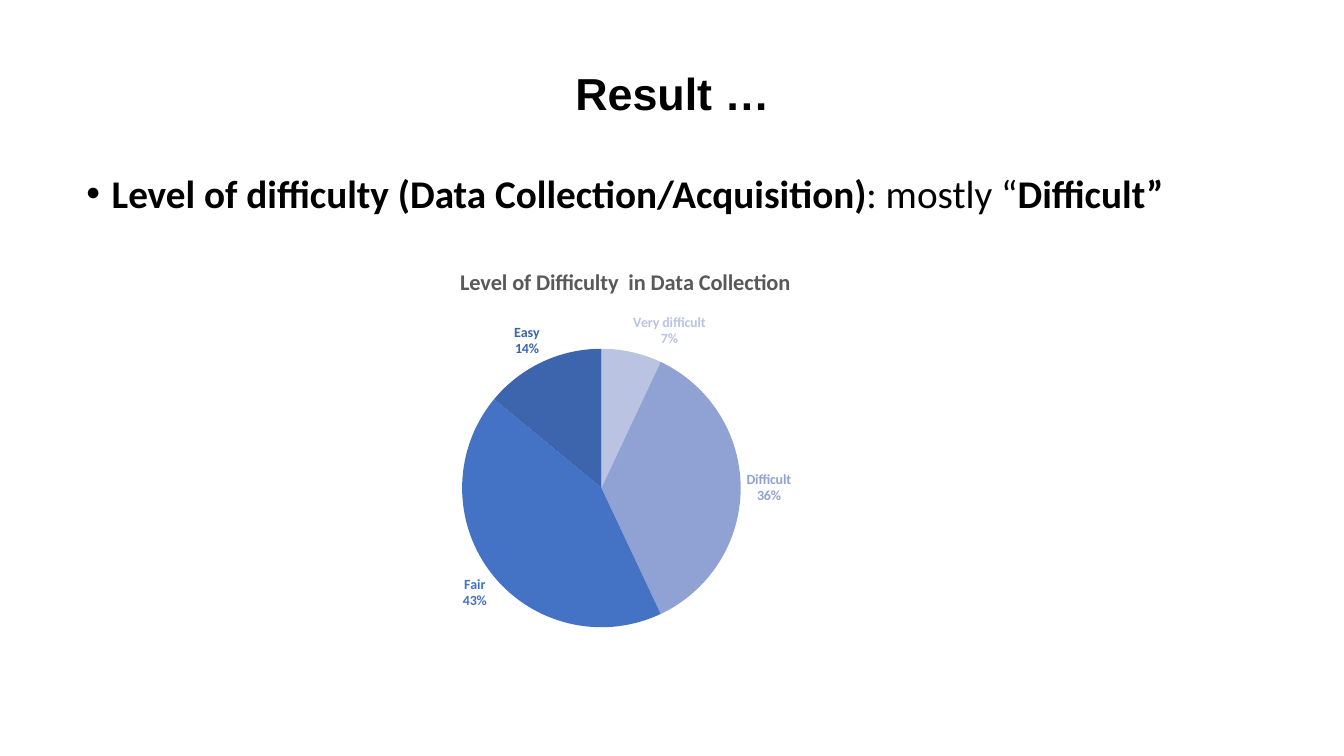
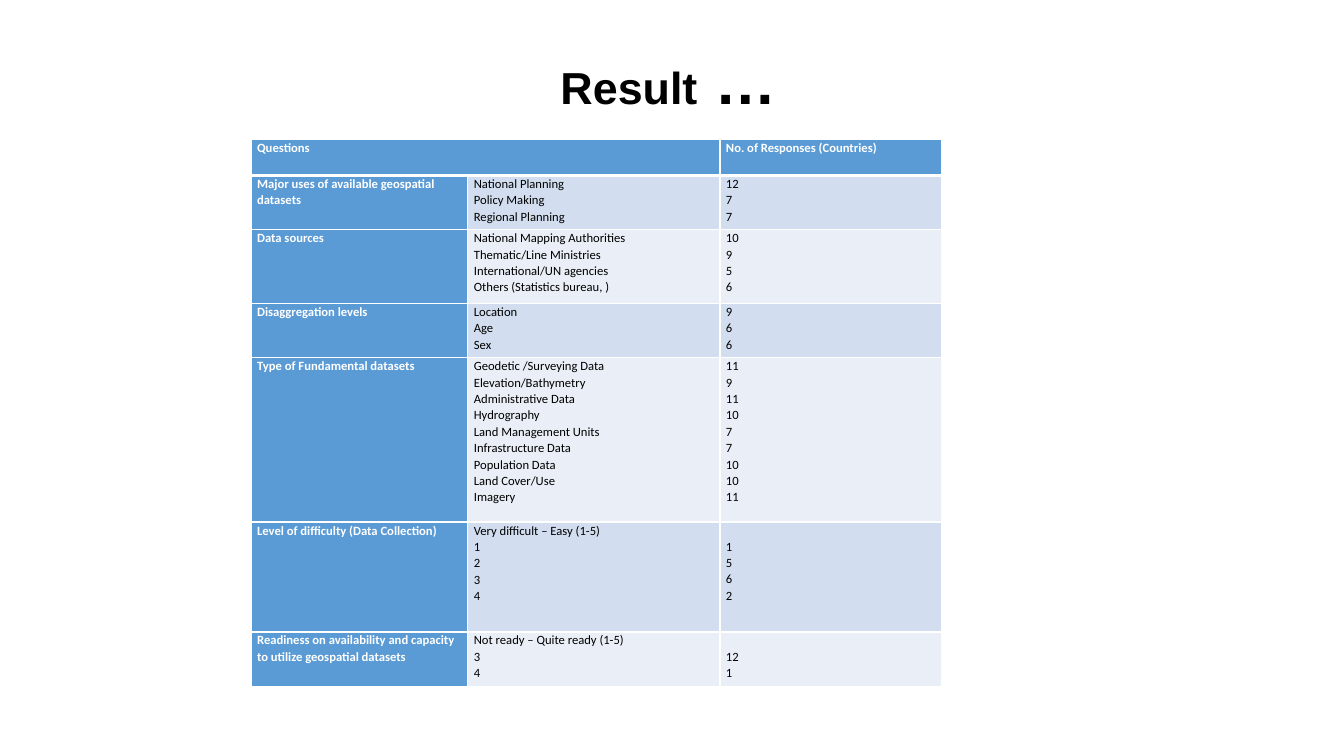
from lxml import etree
from pptx import Presentation
from pptx.chart.data import CategoryChartData
from pptx.dml.color import RGBColor
from pptx.enum import chart as charts, text
from pptx.oxml import parse_xml
from pptx.oxml.ns import nsdecls, qn
from pptx.util import Inches, Pt

COLORS = {
    "black": "000000", "white": "FFFFFF", "chart_title": "595959",
    "header": "5B9BD5", "odd_row": "D2DEEF", "even_row": "EAEFF7",
}
TITLE_FONT, BODY_FONT = "Arial", "Calibri"
TABLE_LINE = 0.16

LEVELS = [
    ("Very difficult", 7, "BAC4E2"),
    ("Difficult", 36, "90A2D3"),
    ("Fair", 43, "4472C4"),
    ("Easy", 14, "3C65AE"),
    ("Very Easy", 0, "345795"),
]

QUESTIONS = [
    ("Major uses of available geospatial datasets", 0.54,
     ["National Planning", "Policy Making", "Regional Planning"], [12, 7, 7]),
    ("Data sources", 0.73,
     ["National Mapping Authorities", "Thematic/Line Ministries",
      "International/UN agencies", "Others (Statistics bureau, )"], [10, 9, 5, 6]),
    ("Disaggregation levels", 0.54, ["Location", "Age", "Sex"], [9, 6, 6]),
    ("Type of Fundamental datasets", 1.63,
     ["Geodetic /Surveying Data", "Elevation/Bathymetry", "Administrative Data",
      "Hydrography", "Land Management Units", "Infrastructure Data",
      "Population Data", "Land Cover/Use", "Imagery"],
     [11, 9, 11, 10, 7, 7, 10, 10, 11]),
    ("Level of difficulty (Data Collection)", 1.09,
     ["Very difficult – Easy (1-5)", "1", "2", "3", "4"], [1, 5, 6, 2]),
    ("Readiness on availability and capacity to utilize geospatial datasets", 0.54,
     ["Not ready – Quite ready (1-5)", "3", "4"], [12, 1]),
]


def style_font(font, size, color="black", bold=False, name=BODY_FONT):
    """Set the face, size, weight and colour of a font."""
    font.name, font.size, font.bold = name, Pt(size), bold
    font.color.rgb = RGBColor.from_string(COLORS.get(color, color))


def add_run(paragraph, words, size, color="black", bold=False, name=BODY_FONT):
    """Append one styled run to a paragraph."""
    run = paragraph.add_run()
    run.text = words
    style_font(run.font, size, color, bold, name)


def add_text_box(slide, box, anchor):
    """Add a wrapping text box and return its first paragraph."""
    frame = slide.shapes.add_textbox(*map(Inches, box)).text_frame
    frame.word_wrap = True
    frame.vertical_anchor = anchor
    paragraph = frame.paragraphs[0]
    paragraph.line_spacing = 0.9
    return paragraph


def add_title(slide, left, top, runs):
    """Add the centred slide title from pairs of words and size."""
    paragraph = add_text_box(slide, (left, top, 11.5, 1.45), text.MSO_ANCHOR.MIDDLE)
    paragraph.alignment = text.PP_ALIGN.CENTER
    for words, size in runs:
        add_run(paragraph, words, size, bold=True, name=TITLE_FONT)


def add_bullet(slide, box, runs):
    """Add a bulleted line from pairs of words and weight."""
    paragraph = add_text_box(slide, box, text.MSO_ANCHOR.TOP)
    properties = paragraph._p.get_or_add_pPr()
    properties.set("marL", str(Inches(0.25)))
    properties.set("indent", str(-Inches(0.25)))
    properties.append(parse_xml(f'<a:buFont {nsdecls("a")} typeface="Arial"/>'))
    properties.append(parse_xml(f'<a:buChar {nsdecls("a")} char="•"/>'))
    for words, bold in runs:
        add_run(paragraph, words, 28, bold=bold)


def manual_layout(x, y, width=None, height=None):
    """Return a chart layout element given in fractions of the chart."""
    fields = [("xMode", "edge"), ("yMode", "edge"), ("x", x), ("y", y)]
    if width:
        fields = [("layoutTarget", "inner"), *fields, ("w", width), ("h", height)]
    inner = "".join(f'<c:{tag} val="{value}"/>' for tag, value in fields)
    return parse_xml(
        f'<c:layout {nsdecls("c")}><c:manualLayout>{inner}</c:manualLayout></c:layout>')


def label_point(point, color):
    """Show category and percentage outside a slice in the slice colour."""
    label = point.data_label
    style_font(label.font, 10, color, True)
    label.position = charts.XL_LABEL_POSITION.OUTSIDE_END
    element = label._dLbl
    for tag, value in (("showVal", "0"), ("showCatName", "1"), ("showPercent", "1")):
        element.find(qn(f"c:{tag}")).set("val", value)
    separator = etree.SubElement(element, qn("c:separator"))
    separator.text = "\n"


def add_difficulty_pie(slide, box):
    """Add the pie of difficulty levels."""
    data = CategoryChartData()
    data.categories = [name for name, _, _ in LEVELS]
    data.add_series("Series 1", [value for _, value, _ in LEVELS])
    frame = slide.shapes.add_chart(charts.XL_CHART_TYPE.PIE, *map(Inches, box), data)
    chart = frame.chart
    chart.has_legend = False
    style_font(chart.font, 10)
    chart.has_title = True
    title = chart.chart_title
    add_run(title.text_frame.paragraphs[0], "Level of Difficulty  in Data Collection",
            16, "chart_title", True)
    for old in title._element.findall(qn("c:layout")):
        title._element.remove(old)
    title._element.find(qn("c:tx")).addnext(manual_layout(0.23, 0.05))
    plot_area = chart._chartSpace.chart.plotArea
    for old in plot_area.findall(qn("c:layout")):
        plot_area.remove(old)
    plot_area.insert(0, manual_layout(0.24, 0.26, 0.45, 0.69))
    plot = chart.plots[0]
    plot.vary_by_categories = True
    series = plot.series[0]
    series.data_labels.show_value = False
    for index, (_, value, color) in enumerate(LEVELS):
        point = series.points[index]
        point.format.fill.solid()
        point.format.fill.fore_color.rgb = RGBColor.from_string(color)
        if value:
            label_point(point, color)


def border_cell(cell, bottom):
    """Draw white borders round a cell, with its own bottom width."""
    properties = cell._tc.get_or_add_tcPr()
    for index, (side, width) in enumerate(zip("LRTB", (1, 1, 1, bottom))):
        properties.insert(index, parse_xml(
            f'<a:ln{side} {nsdecls("a")} w="{Pt(width)}"><a:solidFill>'
            f'<a:srgbClr val="{COLORS["white"]}"/></a:solidFill></a:ln{side}>'))


def fill_cell(cell, lines, fill, heading=False, skipped=0, bottom=1):
    """Write lines into a cell, starting below a number of skipped lines."""
    cell.margin_left = cell.margin_right = Inches(0.06)
    cell.margin_top, cell.margin_bottom = Inches(skipped * TABLE_LINE), 0
    cell.fill.solid()
    cell.fill.fore_color.rgb = RGBColor.from_string(COLORS[fill])
    border_cell(cell, bottom)
    frame = cell.text_frame
    for index, line in enumerate(lines):
        paragraph = frame.add_paragraph() if index else frame.paragraphs[0]
        paragraph.line_spacing = 1.07
        add_run(paragraph, str(line), 9, "white" if heading else "black", heading)


def add_response_table(slide, left, top):
    """Add the table of questions and numbers of responses."""
    widths = [2.15, 2.5, 2.2]
    heights = [0.36] + [height for _, height, _, _ in QUESTIONS]
    frame = slide.shapes.add_table(
        len(heights), len(widths), Inches(left), Inches(top),
        Inches(sum(widths)), Inches(sum(heights)))
    table = frame.table
    for column, width in zip(table.columns, widths):
        column.width = Inches(width)
    for row, height in zip(table.rows, heights):
        row.height = Inches(height)
    headings = (["Questions"], [], ["No. of Responses (Countries)"])
    for column, lines in enumerate(headings):
        fill_cell(table.cell(0, column), lines, "header", True, bottom=3)
    table.cell(0, 0).merge(table.cell(0, 1))
    for row, (question, _, answers, counts) in enumerate(QUESTIONS, 1):
        band = "odd_row" if row % 2 else "even_row"
        fill_cell(table.cell(row, 0), [question], "header", True)
        fill_cell(table.cell(row, 1), answers, band)
        fill_cell(table.cell(row, 2), counts, band, skipped=len(answers) - len(counts))


def build_chart_slide(slide):
    """Place the title, finding and pie chart."""
    add_bullet(slide, (0.76, 1.68, 11.5, 4.76), [
        ("Level of difficulty (Data Collection/Acquisition)", True),
        (": mostly “", False), ("Difficult”", True)])
    add_title(slide, 0.92, 0.23, [("Result …", 32)])
    add_difficulty_pie(slide, (3.11, 2.41, 6.14, 4.02))


def build_table_slide(slide):
    """Place the title and response table."""
    add_title(slide, 0.88, 0.11, [("Result", 32), (" …", 44)])
    add_response_table(slide, 2.49, 1.38)


def main():
    """Build and save the presentation."""
    presentation = Presentation()
    presentation.slide_width, presentation.slide_height = Inches(13.33), Inches(7.5)
    for build in (build_chart_slide, build_table_slide):
        build(presentation.slides.add_slide(presentation.slide_layouts[6]))
    presentation.save("out.pptx")


if __name__ == "__main__":
    main()
